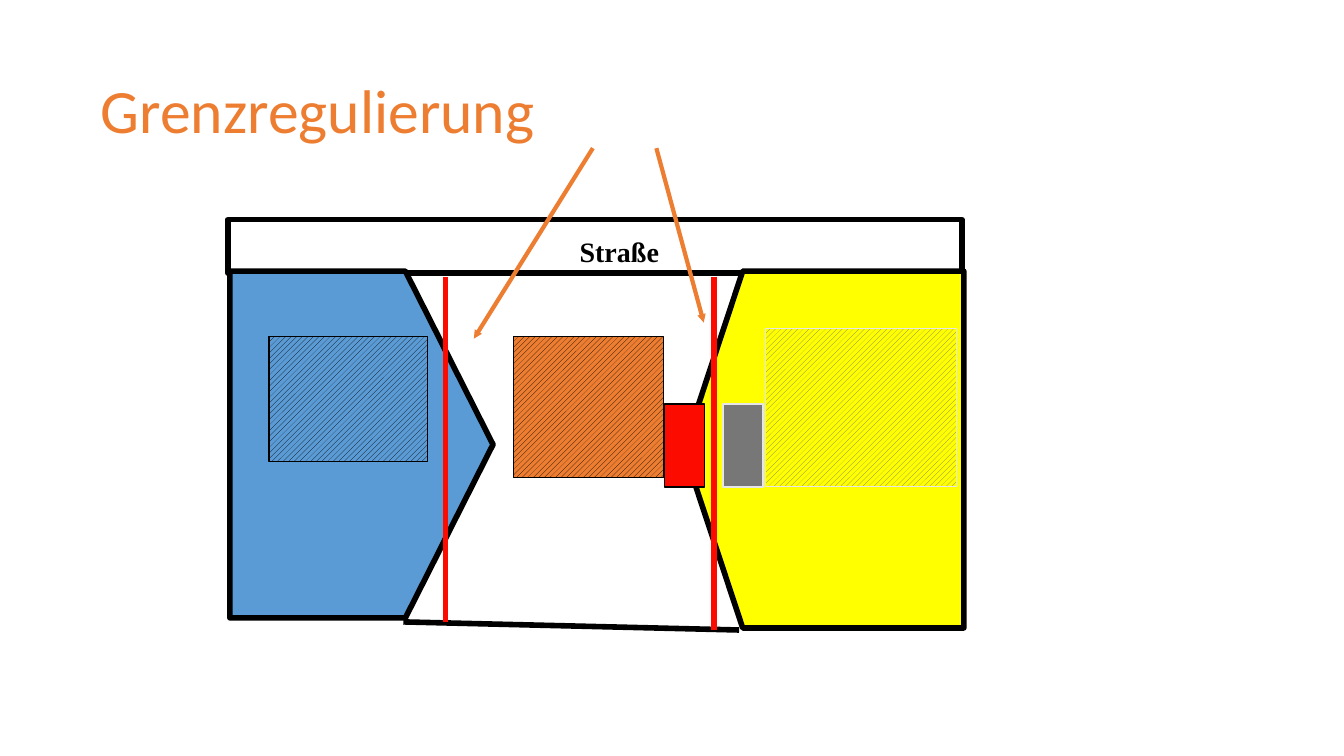
from pptx import Presentation
from pptx.dml.color import RGBColor
from pptx.enum.dml import MSO_PATTERN
from pptx.enum.shapes import MSO_CONNECTOR, MSO_SHAPE
from pptx.enum.text import MSO_ANCHOR
from pptx.oxml.ns import qn
from pptx.util import Inches, Pt
from lxml.etree import SubElement

THEME = {
    "black": "000000", "white": "FFFFFF", "blue": "5B9BD5", "orange": "ED7D31",
    "yellow": "FFFF00", "red": "FC0C00", "gray": "777777", "light": "E7E6E6",
    "title_font": "Calibri", "label_font": "Times New Roman",
    "title_size": 44, "label_size": 20,
    "thick": 4, "arrow": 3, "thin": 1,
}
HATCH = MSO_PATTERN.WIDE_UPWARD_DIAGONAL
STRIPES = MSO_PATTERN.DARK_HORIZONTAL

TITLE = ("Grenzregulierung", (0.92, 0.4, 11.5, 1.45))
STREET_LABEL = ("Straße", (5.65, 2.28, 1, 0.44))
STREET = (2.26, 2.18, 7.28, 0.53)
LEFT_PLOT = ((2.28, 2.69, 2.61, 3.44), "blue", 0.333, False)
RIGHT_PLOT = ((6.78, 2.69, 2.78, 3.54), "yellow", 0.211, True)
LEFT_HOUSE = ((2.67, 3.34, 1.57, 1.24), HATCH, "black", "blue", "black")
RIGHT_HOUSE = ((7.59, 3.26, 1.9, 1.57), HATCH, "gray", "yellow", "light")
MIDDLE_HOUSE = ((5.09, 3.34, 1.49, 1.4), HATCH, "black", "orange", "black")
RIGHT_ANNEX = ((7.17, 4.01, 0.4, 0.82), STRIPES, "gray", "yellow", "light")
MIDDLE_ANNEX = ((6.59, 4.01, 0.4, 0.82), STRIPES, "red", "white", "black")
REAR_BORDER = ((4, 6.17), (7.33, 6.25))
NEW_BORDERS = [((4.42, 2.75), (4.42, 6.17)), ((7.08, 2.75), (7.08, 6.25))]
ARROWS = [((5.88, 1.47), (4.7, 3.36)), ((6.51, 1.47), (6.98, 3.2))]


def color(name):
    return RGBColor.from_string(THEME[name])


def add_text(s, text, box, font, size, fill, bold=False, wrap=True,
             anchor=MSO_ANCHOR.TOP, spacing=1.0, insets=(0.1, 0.05)):
    tf = s.shapes.add_textbox(*map(Inches, box)).text_frame
    tf.word_wrap = wrap
    tf.vertical_anchor = anchor
    tf.margin_left = tf.margin_right = Inches(insets[0])
    tf.margin_top = tf.margin_bottom = Inches(insets[1])
    p = tf.paragraphs[0]
    p.line_spacing = spacing
    r = p.add_run()
    r.text = text
    r.font.name = THEME[font]
    r.font.size = Pt(THEME[size])
    r.font.bold = bold
    r.font.color.rgb = color(fill)


def add_area(s, box, line, width, kind=MSO_SHAPE.RECTANGLE):
    sp = s.shapes.add_shape(kind, *map(Inches, box))
    sp.shadow.inherit = False
    sp.line.color.rgb = color(line)
    sp.line.width = Pt(THEME[width])
    return sp


def add_solid(s, box, fill, kind=MSO_SHAPE.RECTANGLE):
    sp = add_area(s, box, "black", "thick", kind)
    sp.fill.solid()
    sp.fill.fore_color.rgb = color(fill)
    return sp


def add_plot(s, box, fill, point, flipped):
    sp = add_solid(s, box, fill, MSO_SHAPE.PENTAGON)
    sp.adjustments[0] = point
    if flipped:
        sp._element.spPr.find(qn("a:xfrm")).set("flipH", "1")


def add_building(s, box, pattern, fore, back, line):
    sp = add_area(s, box, line, "thin")
    sp.fill.patterned()
    sp.fill.pattern = pattern
    sp.fill.fore_color.rgb = color(fore)
    sp.fill.back_color.rgb = color(back)


def add_line(s, start, end, fill, width, arrow=False):
    c = s.shapes.add_connector(MSO_CONNECTOR.STRAIGHT, *map(Inches, start + end))
    c.line.color.rgb = color(fill)
    c.line.width = Pt(THEME[width])
    if arrow:
        SubElement(c.line._get_or_add_ln(), qn("a:tailEnd"),
                   type="triangle", w="sm", len="sm")
    SubElement(c._element.spPr, qn("a:effectLst"))


def main():
    prs = Presentation()
    prs.slide_width, prs.slide_height = Inches(13.33), Inches(7.5)
    s = prs.slides.add_slide(prs.slide_layouts[6])
    add_text(s, *TITLE, "title_font", "title_size", "orange",
             anchor=MSO_ANCHOR.MIDDLE, spacing=0.9, insets=(0.08, 0.04))
    add_solid(s, STREET, "white")
    add_text(s, *STREET_LABEL, "label_font", "label_size", "black",
             bold=True, wrap=False)
    add_plot(s, *LEFT_PLOT)
    add_building(s, *LEFT_HOUSE)
    add_plot(s, *RIGHT_PLOT)
    for building in (RIGHT_HOUSE, RIGHT_ANNEX):
        add_building(s, *building)
    add_line(s, *REAR_BORDER, "black", "thick")
    add_building(s, *MIDDLE_HOUSE)
    for border in NEW_BORDERS:
        add_line(s, *border, "red", "thick")
    add_building(s, *MIDDLE_ANNEX)
    for arrow in ARROWS:
        add_line(s, *arrow, "orange", "arrow", arrow=True)
    prs.save("out.pptx")


if __name__ == "__main__":
    main()
